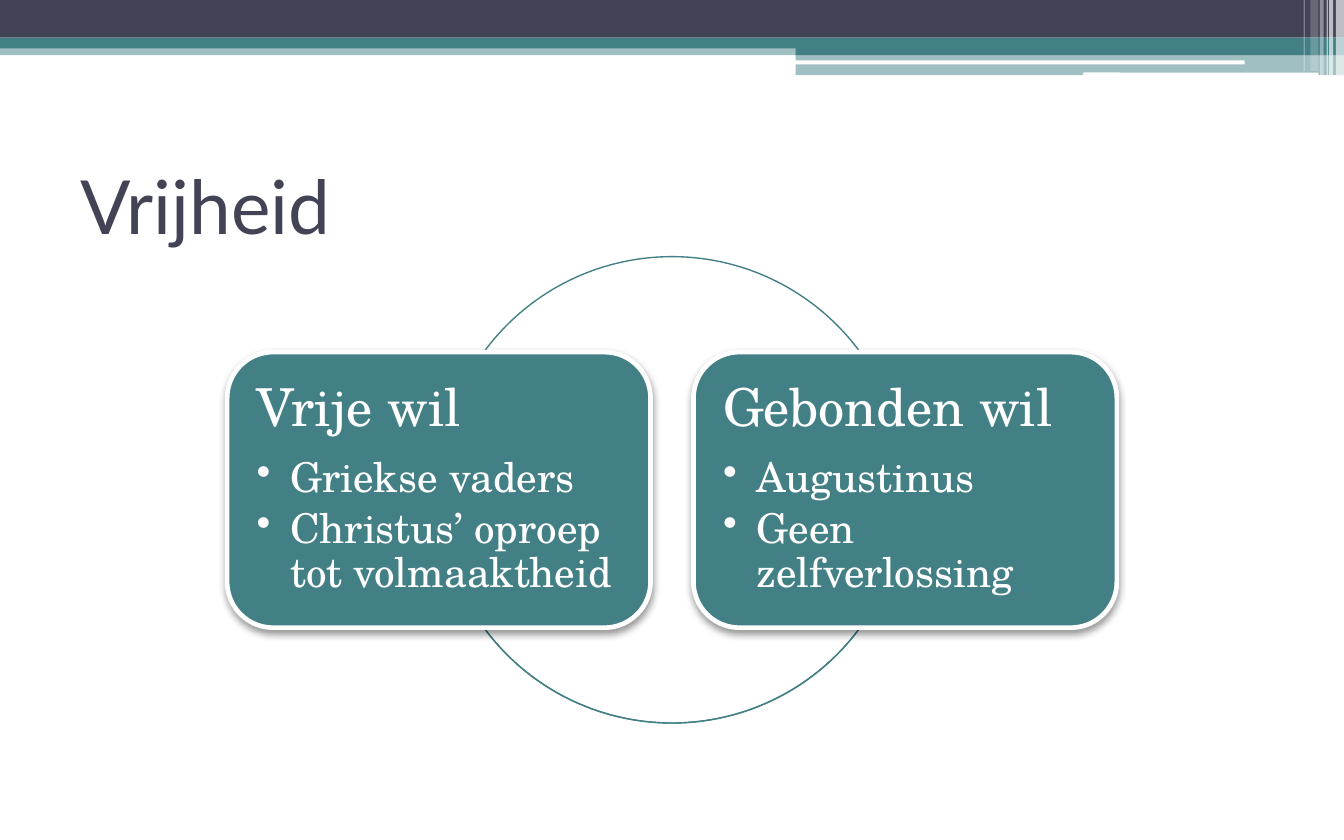
from lxml import etree
from pptx import Presentation
from pptx import util as u
from pptx.dml.color import RGBColor
from pptx.enum import shapes, text
from pptx.oxml.ns import qn

TEAL = RGBColor(0x43, 0x80, 0x86)
NAVY = RGBColor(0x42, 0x44, 0x56)
WHITE = RGBColor(0xFF, 0xFF, 0xFF)
BLACK = RGBColor(0, 0, 0)
KIND = shapes.MSO_SHAPE

prs = Presentation()
prs.slide_width, prs.slide_height = u.Inches(10), u.Inches(6.25)
s = prs.slides.add_slide(prs.slide_layouts[6])

# Square grid of 1000 columns by 625 rows
COL = prs.slide_width / 1000
ROW = prs.slide_height / 625


def add_shape(kind, x, y, w, h, fill=None, opacity=100):
    """Add a shape placed in grid cells, without line or shadow."""
    sp = s.shapes.add_shape(kind, round(x * COL), round(y * ROW), round(w * COL), round(h * ROW))
    sp.shadow.inherit = False
    sp.line.fill.background()
    if fill is None:
        sp.fill.background()
        return sp
    sp.fill.solid()
    sp.fill.fore_color.rgb = fill
    if opacity < 100:
        color = sp.fill._xPr.find(".//" + qn("a:srgbClr"))
        etree.SubElement(color, qn("a:alpha"), val=str(opacity * 1000))
    return sp


def add_text(p, words, font):
    r = p.add_run()
    r.text = words
    r.font.color.rgb = font["color"]
    for name in ("name", "size"):
        setattr(r.font, name, font[name])


# Header bands: kind, left, top, width, height, fill, opacity
for band in (
    (KIND.RECTANGLE, 0, 33, 1000, 8, TEAL, 50),
    (KIND.RECTANGLE, 0, 0, 1000, 28, NAVY),
    (KIND.RECTANGLE, 0, 28, 1000, 8, TEAL),
    (KIND.RECTANGLE, 592, 33, 408, 8, TEAL),
    (KIND.RECTANGLE, 592, 40, 408, 16, TEAL, 50),
    (KIND.ROUNDED_RECTANGLE, 591, 45, 335, 3, WHITE),
    (KIND.ROUNDED_RECTANGLE, 806, 54, 175, 3, WHITE),
):
    add_shape(*band)

# Pale vertical stripes at the right: left, width, height, opacity
for x, w, h, opacity in (
    (994, 6, 57, 65), (989, 3, 57, 65), (987, 1, 57, 60),
    (982, 3, 57, 40), (975, 6, 53, 20), (970, 1, 53, 30),
):
    add_shape(KIND.RECTANGLE, x, 0, w, h, WHITE, opacity)

title = s.shapes.add_textbox(*(round(n * COL) for n in (50, 104, 900, 97)))
tf = title.text_frame
tf.word_wrap = True
tf.vertical_anchor = text.MSO_ANCHOR.MIDDLE
add_text(tf.paragraphs[0], "Vrijheid", {"name": "Lato", "size": u.Pt(40), "color": NAVY})

# Arcs of one circle, above and below the cards: start and end in degrees
DIAMETER = 347
for angles in ((-143.1, -36.9), (36.9, 143.1)):
    arc = add_shape(KIND.ARC, 500 - DIAMETER / 2, 191, DIAMETER, DIAMETER)
    for i, degrees in enumerate(angles):
        arc.adjustments[i] = degrees * 0.6
    arc.line.color.rgb = TEAL
    arc.line.width = u.Pt(0.75)

HEAD = {"name": "TeX Gyre Schola", "size": u.Pt(28), "color": WHITE}
ITEM = {**HEAD, "size": u.Pt(22)}
CARD_W, CARD_GAP = 315, 32
CARDS = (
    ("Vrije wil", ("Griekse vaders", "Christus’ oproep tot volmaaktheid")),
    ("Gebonden wil", ("Augustinus", "Geen zelfverlossing")),
)
for n, (heading, items) in enumerate(CARDS):
    x = 500 - CARD_W - CARD_GAP / 2 + n * (CARD_W + CARD_GAP)
    card = add_shape(KIND.ROUNDED_RECTANGLE, x, 262, CARD_W, 205, TEAL)
    card.line.color.rgb = WHITE
    card.line.width = u.Pt(2.5)
    effects = card._element.spPr.find(qn("a:effectLst"))
    shadow = etree.SubElement(effects, qn("a:outerShdw"), blurRad=str(u.Pt(4.1)),
                              dist=str(u.Pt(2)), dir="5400000", rotWithShape="0")
    color = etree.SubElement(shadow, qn("a:srgbClr"), val=str(BLACK))
    etree.SubElement(color, qn("a:alpha"), val="40000")

    tf = card.text_frame
    margins = {f"margin_{side}": u.Inches(0.12) for side in ("left", "top", "right", "bottom")}
    frame = {"word_wrap": True, "vertical_anchor": text.MSO_ANCHOR.TOP, **margins}
    for name, value in frame.items():
        setattr(tf, name, value)
    for i, words in enumerate((heading, *items)):
        p = tf.add_paragraph() if i else tf.paragraphs[0]
        layout = {"alignment": text.PP_ALIGN.LEFT, "line_spacing": 0.9,
                  "space_after": u.Pt(3.5 if i else 10), "level": 1 if i else 0}
        for name, value in layout.items():
            setattr(p, name, value)
        add_text(p, words, ITEM if i else HEAD)
        if i:
            pPr = p._p.get_or_add_pPr()
            pPr.set("marL", str(u.Inches(0.25)))
            pPr.set("indent", str(-u.Inches(0.25)))
            etree.SubElement(pPr, qn("a:buChar"), char="•")

prs.save("out.pptx")
